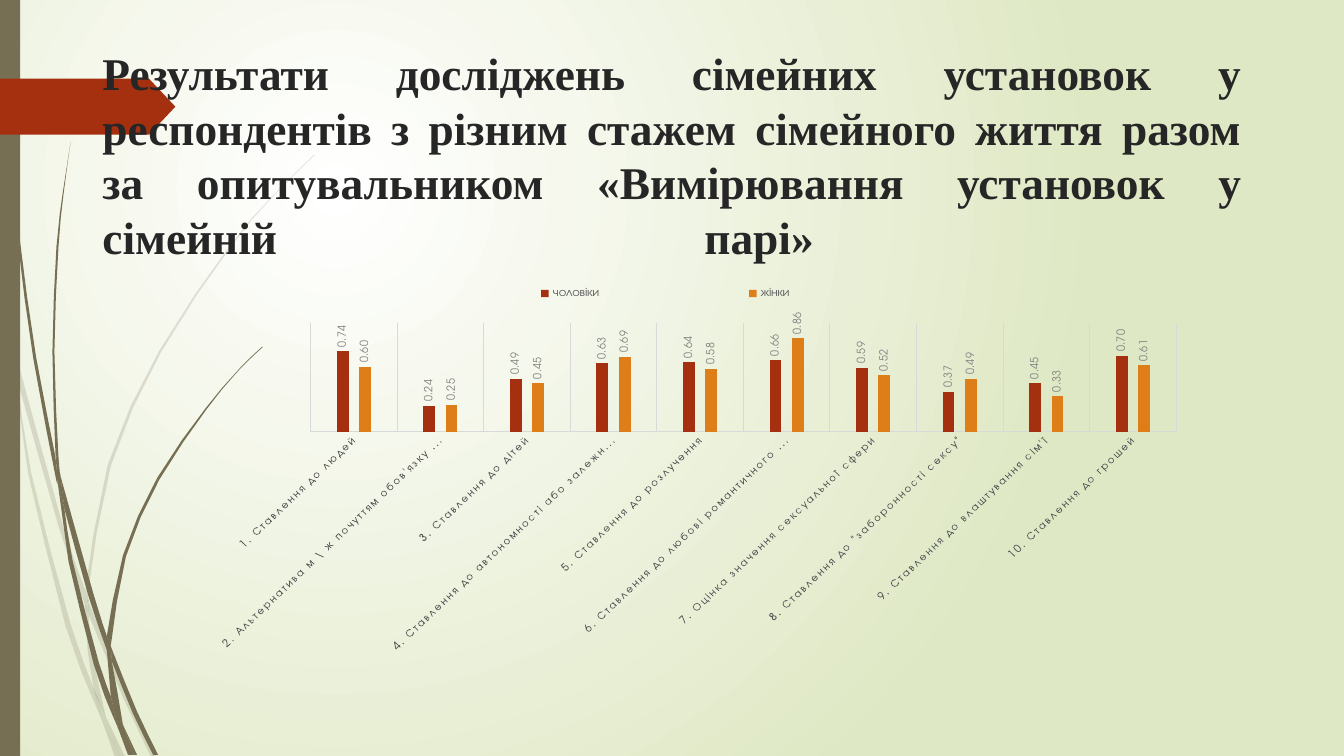
from lxml import etree
from pptx import Presentation
from pptx import util as u
from pptx.chart.data import CategoryChartData
from pptx.dml.color import RGBColor
from pptx.enum import chart as charts, shapes, text
from pptx.oxml import parse_xml
from pptx.oxml.ns import nsdecls, qn

CHART_FONT = "TeX Gyre Adventor"
OLIVE, RED, ORANGE, GRID = "766F54", "A53010", "DE7E18", "D9D9D9"
STEM_UNIT = 0.72

TITLE = (
    "Результати досліджень сімейних установок у респондентів з різним стажем "
    "сімейного життя разом за опитувальником «Вимірювання установок у сімейній парі» \v"
)

ATTITUDES = [
    ("1. Ставлення до людей", 0.74, 0.60),
    ("2. Альтернатива м \\ ж почуттям обов'язку і задоволення", 0.24, 0.25),
    ("3. Ставлення до дітей", 0.49, 0.45),
    ("4. Ставлення до автономності або залежності подружжя", 0.63, 0.69),
    ("5. Ставлення до розлучення", 0.64, 0.58),
    ("6. Ставлення до любові романтичного типу", 0.66, 0.86),
    ("7. Оцінка значення сексуальної сфери", 0.59, 0.52),
    ("8. Ставлення до \"заборонності сексу\"", 0.37, 0.49),
    ("9. Ставлення до влаштування сім'ї", 0.45, 0.33),
    ("10. Ставлення до грошей", 0.70, 0.61),
]

PALE_STEMS = [
    ([(0, 282), (9, 322), (11, 350)], [(10, 344), (0, 299)]),
    ([(14, 345), (62, 520), (85, 586)], [(84, 599), (58, 522), (17, 376)]),
    ([(88, 596), (92, 607), (127, 692), (155, 751)], [(150, 751), (123, 694), (88, 610)]),
    ([(105, 711), (124, 751)], [(119, 751)]),
    ([(11, 350), (17, 376), (31, 469), (70, 619), (93, 683), (101, 714)],
     [(92, 693), (65, 621), (28, 470)]),
    ([(84, 599), (88, 610), (91, 646), (105, 711)], [(96, 692), (93, 683), (87, 646)]),
    ([(88, 596), (88, 584), (110, 462), (160, 349), (229, 245), (268, 198), (312, 154)],
     [(312, 153), (268, 197), (228, 244), (158, 348), (107, 461), (85, 584)]),
    ([(101, 714), (119, 751)], [(114, 751)]),
    ([(85, 586), (88, 596), (88, 610)], [(84, 599)]),
    ([(93, 683), (105, 711), (119, 751)], [(101, 714)]),
]
DARK_STEMS = [
    ([(4, 0), (5, 48), (8, 109), (19, 232), (36, 355), (55, 453), (57, 481)],
     [(56, 477), (33, 355), (17, 233), (7, 110), (4, 48), (3, 0)]),
    ([(60, 472), (93, 590), (106, 631)], [(106, 645), (88, 592), (64, 505)]),
    ([(110, 641), (113, 649), (136, 706), (157, 749)], [(152, 749), (132, 708), (111, 656)]),
    ([(57, 477), (64, 505), (72, 556), (98, 657), (110, 691), (117, 722)],
     [(111, 708), (93, 659), (68, 557)]),
    ([(70, 141), (63, 193), (58, 245), (54, 349), (58, 453), (60, 472)],
     [(55, 449), (52, 349), (56, 245), (62, 193)]),
    ([(122, 719), (136, 749)], [(133, 749)]),
    ([(55, 449), (60, 472), (64, 505)], [(57, 477)]),
    ([(261, 344), (245, 359), (231, 374), (205, 406), (158, 476), (125, 552), (111, 633),
      (110, 641)],
     [(106, 631), (122, 551), (156, 474), (204, 405), (231, 373), (245, 358), (260, 344)]),
    ([(117, 722), (131, 749)], [(127, 749)]),
    ([(106, 645), (111, 656), (122, 719)], [(116, 706), (110, 691)]),
    ([(106, 631), (110, 641), (111, 656)], [(106, 645)]),
    ([(110, 691), (122, 719), (133, 749)], [(130, 749), (117, 722)]),
]


def color(value):
    """Turn a hex string into a colour."""
    return RGBColor.from_string(value)


def format_font(font, size, fill, name=CHART_FONT, bold=False):
    """Set the size, colour, family and weight of a font."""
    font.size, font.name, font.bold = u.Pt(size), name, bold
    font.color.rgb = color(fill)


def write(frame, content, align=text.PP_ALIGN.LEFT, **font_format):
    """Put one formatted paragraph into a text frame."""
    frame.text = content
    paragraph = frame.paragraphs[0]
    paragraph.alignment, paragraph.line_spacing = align, 1.0
    format_font(paragraph.font, **font_format)
    for run in paragraph.runs:
        format_font(run.font, **font_format)


def paint(shape, fill, alpha=100):
    """Give a shape a plain fill with no line or shadow."""
    shape.shadow.inherit = False
    shape.fill.solid()
    shape.fill.fore_color.rgb = color(fill)
    shape.line.fill.background()
    if alpha < 100:
        tint = shape.element.spPr.find(qn("a:solidFill"))[0]
        etree.SubElement(tint, qn("a:alpha"), val=str(alpha * 1000))


def add_preset(slide, kind, left, top, width, height, fill):
    """Add a filled preset shape."""
    shape = slide.shapes.add_shape(kind, u.Pt(left), u.Pt(top), u.Pt(width), u.Pt(height))
    paint(shape, fill)
    return shape


def smooth_edge(knots):
    """Add a curved midpoint between each pair of knots."""
    padded = [knots[0], *knots, knots[-1]]
    curve = []
    for a, b, c, d in zip(padded, padded[1:], padded[2:], padded[3:]):
        middle = [(9 * (q + r) - p - s) / 16 for p, q, r, s in zip(a, b, c, d)]
        curve += [b, middle]
    return curve + [knots[-1]]


def add_stem(slide, edges, alpha):
    """Draw one piece of a grass stem between two edges."""
    outline = [(u.Pt(x * STEM_UNIT), u.Pt(y * STEM_UNIT))
               for edge in edges for x, y in smooth_edge(edge)]
    builder = slide.shapes.build_freeform(*outline[0])
    builder.add_line_segments(outline[1:], close=True)
    paint(builder.convert_to_shape(), OLIVE, alpha)


def set_background(slide):
    """Fill the background with a radial gradient."""
    fill = slide.background.fill
    fill.gradient()
    for stop, value in zip(fill.gradient_stops, ("FFFFFF", "DFE8C4")):
        stop.color.rgb = color(value)
    linear = next(slide.element.iter(qn("a:lin")))
    linear.getparent().replace(linear, parse_xml(
        f'<a:path {nsdecls("a")} path="circle">'
        '<a:fillToRect l="50000" t="50000" r="100000" b="100000"/></a:path>'))


def add_title(slide):
    """Place the title in front of the decoration."""
    title = slide.shapes.title
    title.left, title.top, title.width, title.height = map(u.Pt, (66, 28.8, 828, 115.2))
    title.element.getparent().append(title.element)
    frame = title.text_frame
    frame.word_wrap, frame.auto_size = True, text.MSO_AUTO_SIZE.NONE
    frame.vertical_anchor = text.MSO_ANCHOR.TOP
    write(frame, TITLE, align=text.PP_ALIGN.JUSTIFY,
          size=32.4, fill="262626", name="Times New Roman", bold=True)


def format_axes(chart):
    """Style the category axis and hide the value axis."""
    category, value = chart.category_axis, chart.value_axis
    category.major_tick_mark = category.minor_tick_mark = charts.XL_TICK_MARK.NONE
    category.has_major_gridlines = True
    for line in (category.format.line, category.major_gridlines.format.line):
        line.color.rgb, line.width = color(GRID), u.Pt(0.75)
    format_font(category.tick_labels.font, 8, "595959")
    value.has_major_gridlines, value.visible = False, False
    value.minimum_scale, value.maximum_scale = 0, 1
    value.tick_labels.number_format = "0.00"
    value.tick_labels.number_format_is_linked = False


def format_series(plot):
    """Colour the columns and show their values."""
    plot.gap_width, plot.overlap, plot.vary_by_categories = 444, -90, False
    for series, fill in zip(plot.series, (RED, ORANGE)):
        series.format.fill.solid()
        series.format.fill.fore_color.rgb = color(fill)
        labels = series.data_labels
        labels.show_value, labels.position = True, charts.XL_LABEL_POSITION.OUTSIDE_END
        labels.number_format, labels.number_format_is_linked = "0.00", False
        format_font(labels.font, 8, "808080")


def set_layout(part, index, x, y, w, h, target=""):
    """Fix the place of a chart part as shares of the chart."""
    for layout in part.findall(qn("c:layout")):
        part.remove(layout)
    values = {"xMode": "edge", "yMode": "edge", "x": x, "y": y, "w": w, "h": h}
    if target:
        values = {"layoutTarget": target, **values}
    sizes = "".join(f'<c:{key} val="{value}"/>' for key, value in values.items())
    part.insert(index, parse_xml(
        f'<c:layout {nsdecls("c")}><c:manualLayout>{sizes}</c:manualLayout></c:layout>'))


def arrange_chart(chart):
    """Turn the labels and fix the plot area and legend."""
    root = chart.element
    for owner, angle in (("c:catAx", -45), ("c:dLbls", -90)):
        for body in root.xpath(f".//{owner}/c:txPr/a:bodyPr"):
            body.set("rot", str(angle * 60000))
            body.set("vert", "horz")
    for properties in root.xpath(".//c:catAx/c:txPr//a:defRPr"):
        properties.set("spc", "120")
    set_layout(next(root.iter(qn("c:plotArea"))), 0, 0.171, 0.146, 0.802, 0.298, "inner")
    set_layout(next(root.iter(qn("c:legend"))), 1, 0.25, 0.03, 0.5, 0.07)


def add_attitude_chart(slide):
    """Add the column chart of family attitudes."""
    names, men, women = zip(*ATTITUDES)
    data = CategoryChartData(number_format="0.00")
    data.categories = names
    data.add_series("чоловіки", men)
    data.add_series("жінки", women)
    chart = slide.shapes.add_chart(charts.XL_CHART_TYPE.COLUMN_CLUSTERED, u.Pt(90),
                                   u.Pt(192.7), u.Pt(771), u.Pt(273), data).chart
    chart.has_title = False
    format_font(chart.font, 10, "000000")
    chart.has_legend = True
    chart.legend.position = charts.XL_LEGEND_POSITION.TOP
    chart.legend.include_in_layout = False
    format_font(chart.legend.font, 9, "595959")
    format_axes(chart)
    format_series(chart.plots[0])
    arrange_chart(chart)


def main():
    """Build and save the slide."""
    presentation = Presentation()
    presentation.slide_width, presentation.slide_height = u.Pt(960), u.Pt(540)
    slide = presentation.slides.add_slide(presentation.slide_layouts[5])
    set_background(slide)
    for stems, alpha in ((PALE_STEMS, 20), (DARK_STEMS, 100)):
        for edges in stems:
            add_stem(slide, edges, alpha)
    add_preset(slide, shapes.MSO_SHAPE.RECTANGLE, 0, 0, 14.4, 540, OLIVE)
    arrow = add_preset(slide, shapes.MSO_SHAPE.PENTAGON, 0, 56.2, 125.3, 40, RED)
    arrow.adjustments[0] = 0.47
    add_title(slide)
    add_attitude_chart(slide)
    presentation.save("out.pptx")


if __name__ == "__main__":
    main()
